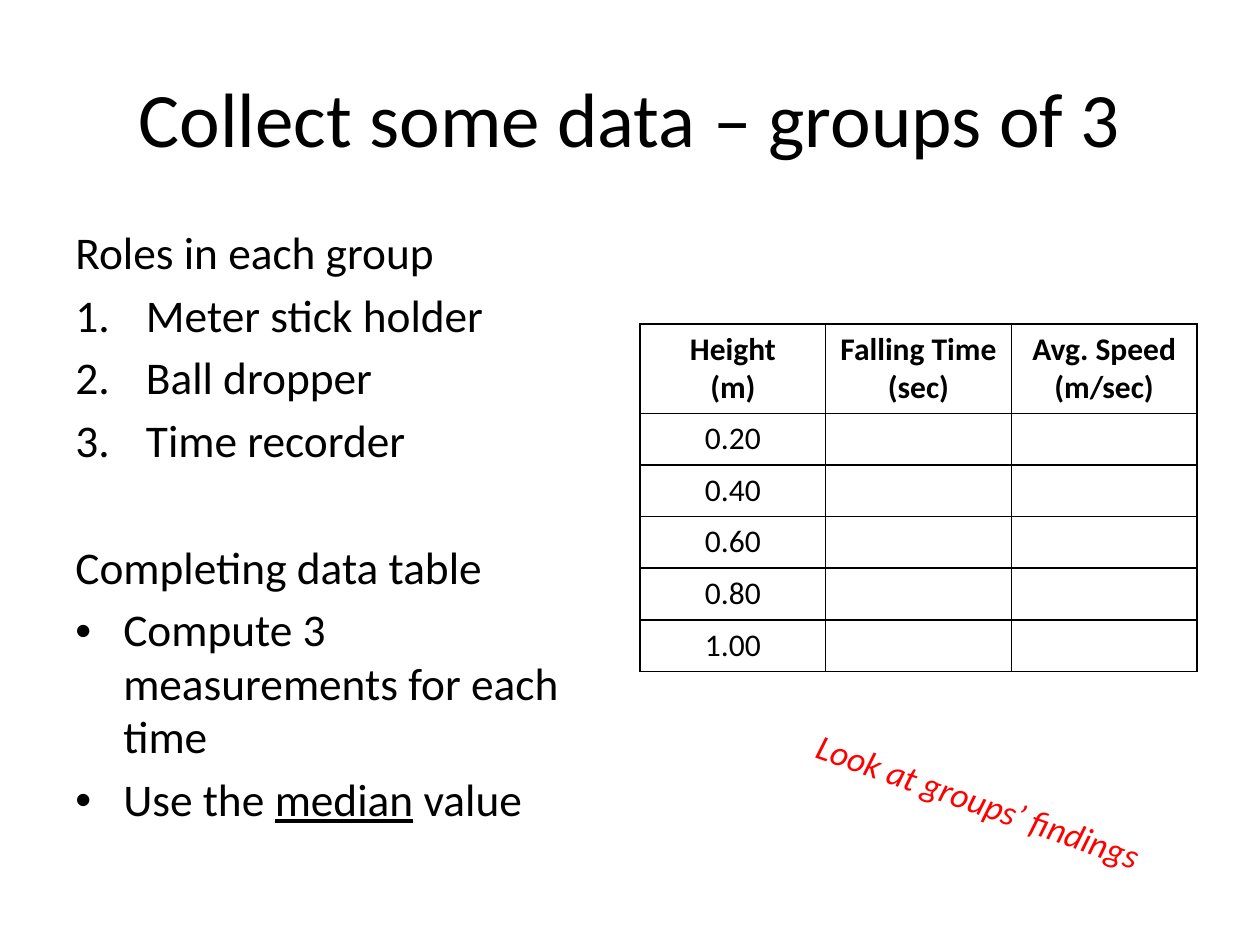
"""Build the slide on collecting falling-time data in groups of three."""
import pptx
import pptx.util
import pptx.dml.color
import pptx.enum.text
import pptx.oxml
import pptx.oxml.ns
import lxml.etree

Inches, Pt = pptx.util.Inches, pptx.util.Pt
CENTER = pptx.enum.text.PP_ALIGN.CENTER
MIDDLE = pptx.enum.text.MSO_ANCHOR.MIDDLE
COLORS = {"text": "000000", "border": "000000", "note": "FF0000"}


def add_run(p, text, size=18, color="text", bold=False, italic=False, underline=False):
    r = p.add_run()
    r.text = text
    r.font.name = "Calibri"
    r.font.size = Pt(size)
    r.font.bold = bold
    r.font.italic = italic
    r.font.underline = underline
    r.font.color.rgb = pptx.dml.color.RGBColor.from_string(COLORS[color])


def add_border(cell):
    tcPr = cell._tc.get_or_add_tcPr()
    for i, side in enumerate(("lnL", "lnR", "lnT", "lnB")):
        ln = lxml.etree.Element(pptx.oxml.ns.qn(f"a:{side}"), w=str(Pt(1)))
        fill = lxml.etree.SubElement(ln, pptx.oxml.ns.qn("a:solidFill"))
        lxml.etree.SubElement(fill, pptx.oxml.ns.qn("a:srgbClr"), val=COLORS["border"])
        tcPr.insert(i, ln)


prs = pptx.Presentation()
prs.slide_width, prs.slide_height = Inches(10), Inches(7.5)
s = prs.slides.add_slide(prs.slide_layouts[6])

tf = s.shapes.add_textbox(Inches(0.5), Inches(0.3), Inches(9), Inches(1.25)).text_frame
tf.word_wrap = True
tf.vertical_anchor = MIDDLE
p = tf.paragraphs[0]
p.alignment = CENTER
add_run(p, "Collect some data – groups of 3", size=44)

body = [
    (["Roles in each group"], None, 5.4),
    (["Meter stick holder"], "number", 5.4),
    (["Ball dropper"], "number", 5.4),
    (["Time recorder"], "number", 5.4),
    (["Completing data table"], None, 41.7),
    (["Compute 3 measurements for each time"], "bullet", 5.4),
    (["Use the ", "median", " value"], "bullet", 5.4),
]
markers = {
    "number": (0.56, "a:buAutoNum", {"type": "arabicPeriod"}),
    "bullet": (0.38, "a:buChar", {"char": "•"}),
}
tf = s.shapes.add_textbox(Inches(0.5), Inches(1.75), Inches(4.42), Inches(4.95)).text_frame
tf.word_wrap = True
for i, (texts, marker, before) in enumerate(body):
    p = tf.add_paragraph() if i else tf.paragraphs[0]
    p.space_before = Pt(before)
    p.line_spacing = 0.98
    for text in texts:
        add_run(p, text, size=25.9, underline=text == "median")
    if marker:
        indent, tag, attrs = markers[marker]
        pPr = p._p.get_or_add_pPr()
        pPr.set("marL", str(Inches(indent)))
        pPr.set("indent", str(-Inches(indent)))
        lxml.etree.SubElement(pPr, pptx.oxml.ns.qn("a:buFont"), typeface="Arial" if marker == "bullet" else "+mj-lt")
        lxml.etree.SubElement(pPr, pptx.oxml.ns.qn(tag), **attrs)

rows = [[["Height", "(m)"], ["Falling Time (sec)"], ["Avg. Speed (m/sec)"]]]
rows += [[[f"{n * 0.2:.2f}"], [], []] for n in range(1, 6)]
table = s.shapes.add_table(6, 3, Inches(5.08), Inches(2.57), Inches(4.42), Inches(2.73)).table
for col in table.columns:
    col.width = Inches(4.42 / 3)
for i, row in enumerate(rows):
    table.rows[i].height = Inches(0.41 if i else 0.71)
    for j, lines in enumerate(row):
        cell = table.cell(i, j)
        cell.fill.background()
        add_border(cell)
        for k, line in enumerate(lines):
            p = cell.text_frame.add_paragraph() if k else cell.text_frame.paragraphs[0]
            p.alignment = CENTER
            add_run(p, line, bold=i == 0)

sp = s.shapes.add_textbox(Inches(6.32), Inches(6.14), Inches(2.91), Inches(0.44))
sp.rotation = 19.4
tf = sp.text_frame
tf.word_wrap = False
tf.auto_size = pptx.enum.text.MSO_AUTO_SIZE.SHAPE_TO_FIT_TEXT
add_run(tf.paragraphs[0], "Look at groups’ findings", size=20, color="note", italic=True)

prs.save("out.pptx")
